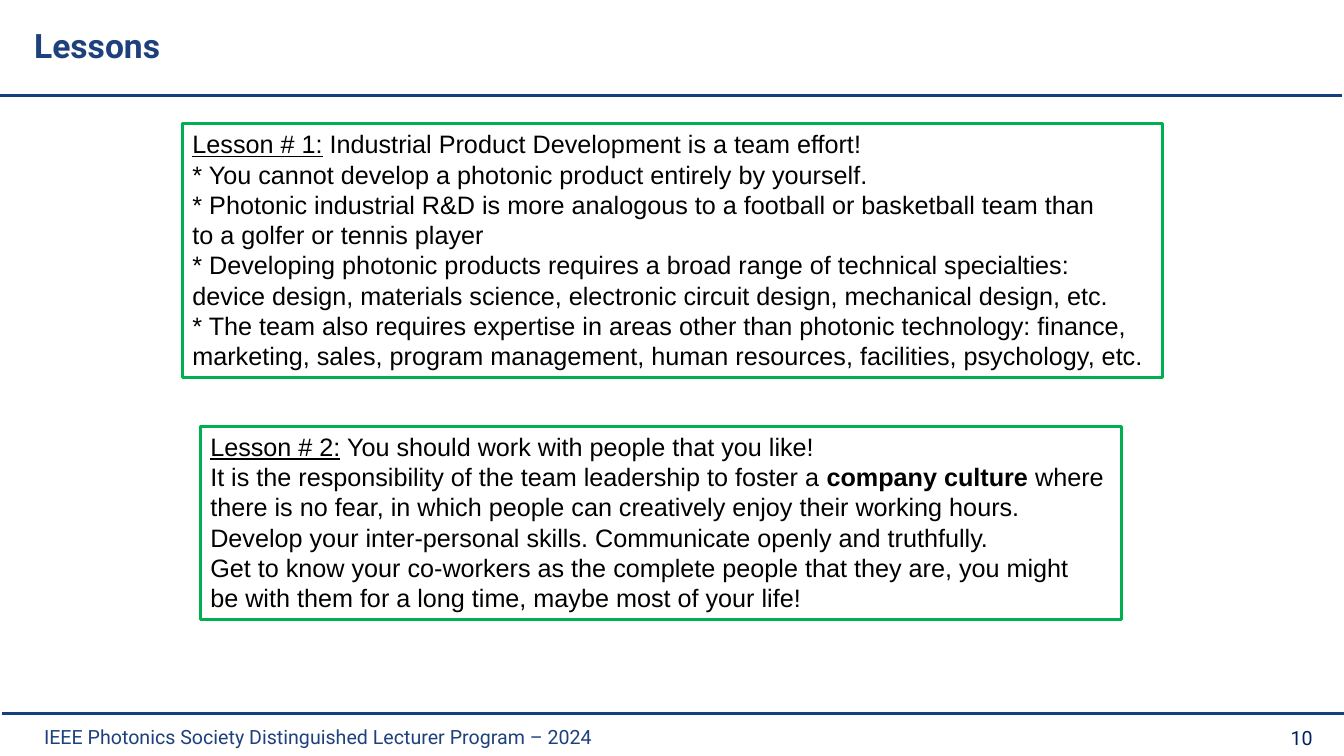
from lxml import etree
from pptx import Presentation
from pptx.dml.color import RGBColor
from pptx.enum import shapes, text
from pptx.oxml.ns import qn
from pptx.util import Cm, Pt

RULE_BLUE = RGBColor(0x14, 0x40, 0x7D)
TITLE_BLUE = RGBColor(0x1E, 0x41, 0x7D)
NUMBER_BLUE = RGBColor(0x00, 0x20, 0x60)
GREEN = RGBColor(0x00, 0xB0, 0x50)
BLACK = RGBColor(0, 0, 0)
LEFT, RIGHT = text.PP_ALIGN.LEFT, text.PP_ALIGN.RIGHT


def place(sp, left, top, width, height):
    sp.left, sp.top, sp.width, sp.height = (Cm(v) for v in (left, top, width, height))


def write(p, runs, color, align=LEFT, **font):
    """Fill a paragraph with (text, extra font attributes) runs sharing one format."""
    p.alignment = align
    for words, extra in runs:
        r = p.add_run()
        r.text = words
        r.font.color.rgb = color
        for name, value in {**font, **extra}.items():
            setattr(r.font, name, value)


prs = Presentation()
prs.slide_width, prs.slide_height = Cm(33.87), Cm(19.05)
s = prs.slides.add_slide(prs.slide_layouts[5])

# Header and footer rules
for x1, x2, y in [(0.05, 33.87, 17.98), (0, 33.83, 2.41)]:
    line = s.shapes.add_connector(shapes.MSO_CONNECTOR.STRAIGHT, Cm(x1), Cm(y), Cm(x2), Cm(y))
    line.line.color.rgb = RULE_BLUE
    line.line.width = Pt(2.5)
    etree.SubElement(line._element.spPr, qn("a:effectLst"))

# Title
title = s.shapes.title
place(title, 0.86, 0.15, 29.16, 1.96)
tf = title.text_frame
tf.margin_left = tf.margin_right = 0
tf.vertical_anchor = text.MSO_ANCHOR.MIDDLE
tf.auto_size = text.MSO_AUTO_SIZE.NONE
write(tf.paragraphs[0], [("Lessons", {})], TITLE_BLUE, name="Roboto", size=Pt(24), bold=True)

# Footer and slide number
for words, box, color, align, wrap in [
    ("IEEE Photonics Society Distinguished Lecturer Program – 2024",
     (0.86, 18.14, 14.76, 0.86), TITLE_BLUE, LEFT, False),
    ("10", (25.43, 18.16, 7.9, 0.79), NUMBER_BLUE, RIGHT, True),
]:
    sp = s.shapes.add_textbox(*(Cm(v) for v in box))
    sp.text_frame.word_wrap = wrap
    write(sp.text_frame.paragraphs[0], [(words, {})], color, align, name="Roboto", size=Pt(14))

# Lessons: each line is a list of runs
lessons = [
    ((5.05, 10.74, 23.22, 4.88), [
        [("Lesson # 2:", {"underline": True}),
         (" You should work with people that you like!", {})],
        [("It is the responsibility of the team leadership to foster a ", {}),
         ("company culture", {"bold": True}), (" where", {})],
        [("there is no fear, in which people can creatively enjoy their working hours.", {})],
        [("Develop your inter-personal skills. Communicate openly and truthfully.", {})],
        [("Get to know your co-workers as the complete people that they are, you might", {})],
        [("be with them for a long time, maybe most of your life!", {})],
    ]),
    ((4.6, 3.12, 24.69, 6.4), [
        [("Lesson # 1:", {"underline": True}),
         (" Industrial Product Development is a team effort!", {})],
        [("* You cannot develop a photonic product entirely by yourself.", {})],
        [("* Photonic industrial R&D is more analogous to a football or basketball team than", {})],
        [("to a golfer or tennis player", {})],
        [("* Developing photonic products requires a broad range of technical specialties:", {})],
        [("device design, materials science, electronic circuit design, mechanical design, etc.", {})],
        [("* The team also requires expertise in areas other than photonic technology: finance,", {})],
        [("marketing, sales, program management, human resources, facilities, psychology, etc.", {})],
    ]),
]
for box, lines in lessons:
    sp = s.shapes.add_shape(shapes.MSO_SHAPE.RECTANGLE, *(Cm(v) for v in box))
    sp.shadow.inherit = False
    sp.fill.background()
    sp.line.color.rgb = GREEN
    sp.line.width = Pt(2)
    tf = sp.text_frame
    tf.word_wrap = False
    tf.auto_size = text.MSO_AUTO_SIZE.SHAPE_TO_FIT_TEXT
    tf.vertical_anchor = text.MSO_ANCHOR.TOP
    for i, runs in enumerate(lines):
        p = tf.add_paragraph() if i else tf.paragraphs[0]
        write(p, runs, BLACK, name="Arial", size=Pt(18))

prs.save("out.pptx")
